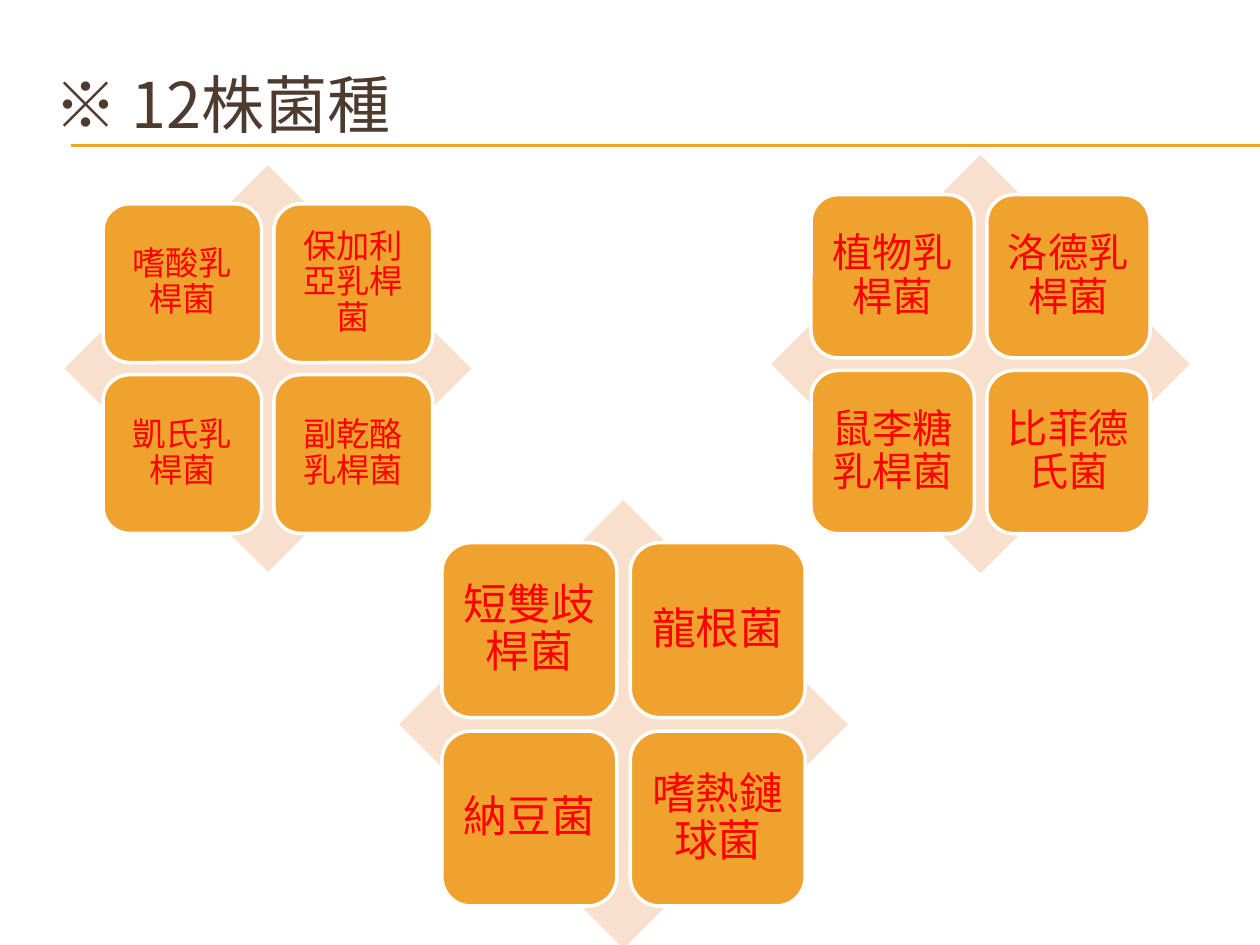
"""Builds a slide showing twelve bacterial strains in three diamond matrices."""
from lxml.etree import SubElement
from pptx import Presentation
from pptx.dml.color import RGBColor
from pptx.enum.shapes import MSO_CONNECTOR as Connector, MSO_SHAPE as Shape
from pptx.enum.text import MSO_ANCHOR as Anchor, PP_ALIGN as Align
from pptx.oxml.ns import qn
from pptx.util import Pt

FONT = "Noto Sans CJK SC"
COLORS = {"title": "4E3B30", "rule": "F0A22E", "diamond": "F9E0CD",
          "tile": "F0A22E", "border": "FFFFFF", "strain": "FF0000"}
MATRICES = [
    (36.8, 94.4, 232.5, 19, 5.8, ["嗜酸乳桿菌", "保加利亞乳桿菌", "凱氏乳桿菌", "副乾酪乳桿菌"]),
    (440.7, 88.5, 239.2, 23, 7, ["植物乳桿菌", "洛德乳桿菌", "鼠李糖乳桿菌", "比菲德氏菌"]),
    (228.2, 285.8, 256.3, 25, 7.5, ["短雙歧桿菌", "龍根菌", "納豆菌", "嗜熱鏈球菌"]),
]


def color(name):
    return RGBColor.from_string(COLORS[name])


def write(shape, text, *, size, ink, margin=None, align=Align.LEFT, spacing=1.0):
    frame = shape.text_frame
    frame.word_wrap = True
    frame.vertical_anchor = Anchor.MIDDLE
    if margin is not None:
        frame.margin_left = frame.margin_right = Pt(margin)
        frame.margin_top = frame.margin_bottom = Pt(margin)
    paragraph = frame.paragraphs[0]
    paragraph.alignment = align
    paragraph.line_spacing = spacing
    run = paragraph.add_run()
    run.text = text
    run.font.size = Pt(size)
    run.font.name = FONT
    run.font.color.rgb = color(ink)
    SubElement(run.font._element, qn("a:ea"), typeface=FONT)


def add_rule(slide, y):
    rule = slide.shapes.add_connector(Connector.STRAIGHT, Pt(40.5), Pt(y), Pt(720), Pt(y))
    rule.line.color.rgb = color("rule")
    rule.line.width = Pt(0.75)
    SubElement(rule._element.spPr, qn("a:effectLst"))


def add_block(shapes, kind, left, top, size, fill):
    block = shapes.add_shape(kind, Pt(left), Pt(top), Pt(size), Pt(size))
    block.shadow.inherit = False
    block.fill.solid()
    block.fill.fore_color.rgb = color(fill)
    block.line.fill.background()
    return block


def add_matrix(slide, left, top, size, text_size, margin, strains):
    shapes = slide.shapes.add_group_shape().shapes
    add_block(shapes, Shape.DIAMOND, left, top, size, "diamond")
    inset, pitch, side = 0.095 * size, 0.42 * size, 0.39 * size
    for index, strain in enumerate(strains):
        row, column = divmod(index, 2)
        tile = add_block(shapes, Shape.ROUNDED_RECTANGLE, left + inset + column * pitch,
                         top + inset + row * pitch, side, "tile")
        tile.line.color.rgb = color("border")
        tile.line.width = Pt(2)
        write(tile, strain, size=text_size, ink="strain", margin=margin,
              align=Align.CENTER, spacing=0.9)


def main():
    deck = Presentation()
    deck.slide_width, deck.slide_height = Pt(720), Pt(540)
    slide = deck.slides.add_slide(deck.slide_layouts[6])
    for y in (82.8, 83.4):
        add_rule(slide, y)
    title = slide.shapes.add_textbox(Pt(23.8), Pt(25.9), Pt(684), Pt(66.2))
    write(title, "※ 12株菌種", size=36, ink="title")
    for matrix in MATRICES:
        add_matrix(slide, *matrix)
    deck.save("out.pptx")


if __name__ == "__main__":
    main()
